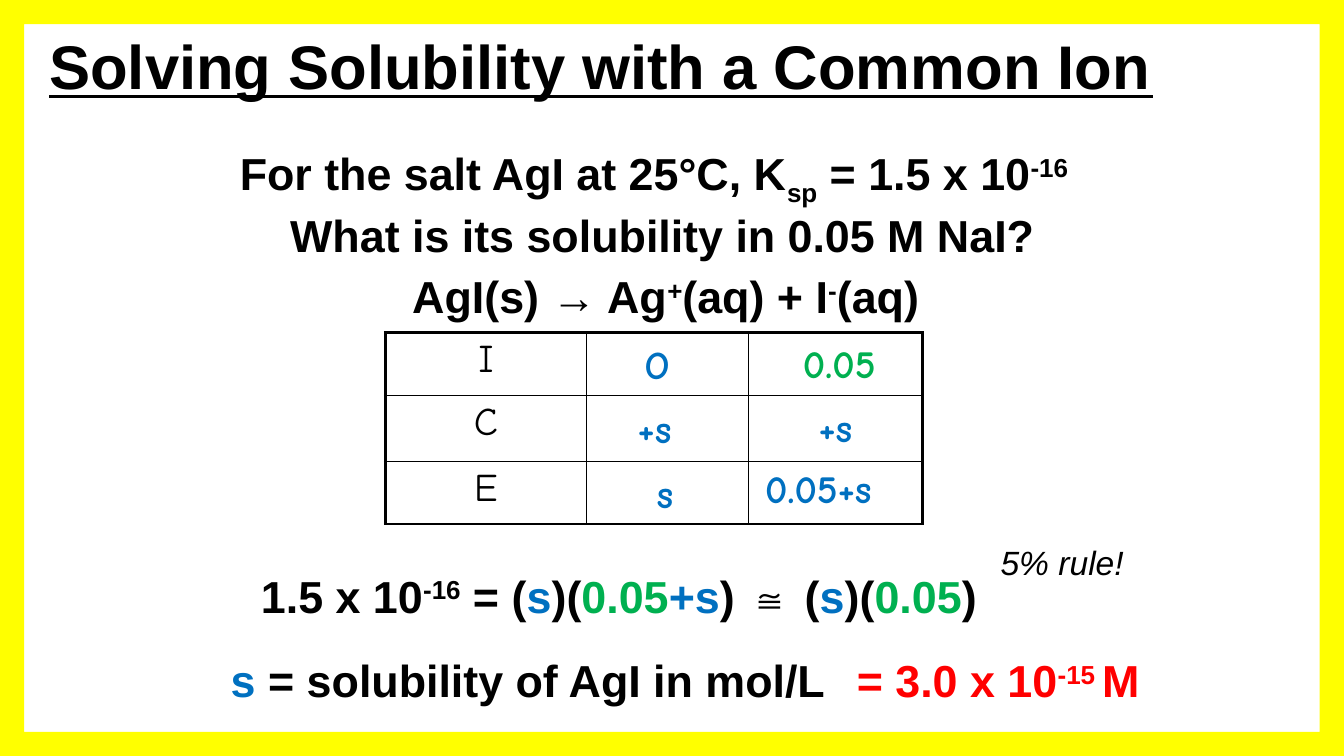
import itertools

import pptx
import pptx.dml.color
import pptx.enum.shapes
import pptx.enum.text
import pptx.oxml
import pptx.oxml.ns
import pptx.util

WIDTH, HEIGHT = 13.33, 7.5
BLACK, BLUE, GREEN, RED, YELLOW = "000000", "0070C0", "00B050", "FF0000", "FFFF00"
SUPER, SUB = 30, -25
CENTER = pptx.enum.text.PP_ALIGN.CENTER
LINE_HEIGHT = 0.64


def inches(*lengths):
    return [pptx.util.Inches(length) for length in lengths]


def rgb(code):
    return pptx.dml.color.RGBColor.from_string(code)


def style(font, size, face="Arial", bold=True):
    font.size = pptx.util.Pt(size)
    font.name = face
    font.bold = bold


def add_runs(paragraph, pieces):
    """Each piece is a text, a colour and, if raised or lowered, a baseline shift in percent."""
    for words, color, *shift in pieces:
        run = paragraph.add_run()
        run.text = words
        run.font.color.rgb = rgb(color)
        if shift:
            run._r.get_or_add_rPr().set("baseline", str(shift[0] * 1000))


def add_text(slide, box, lines, size=32, face="Arial", bold=True, wrap=False, align=None):
    frame = slide.shapes.add_textbox(*inches(*box)).text_frame
    frame.word_wrap = wrap
    frame.auto_size = pptx.enum.text.MSO_AUTO_SIZE.SHAPE_TO_FIT_TEXT
    for number, pieces in enumerate(lines):
        paragraph = frame.add_paragraph() if number else frame.paragraphs[0]
        paragraph.alignment = align
        style(paragraph.font, size, face, bold)
        add_runs(paragraph, pieces)
    return frame


def add_title(slide, box):
    frame = add_text(slide, box, [[("Solving Solubility with a Common Ion", BLACK)]],
                     size=44, wrap=True, align=CENTER)
    frame.auto_size = pptx.enum.text.MSO_AUTO_SIZE.NONE
    frame.vertical_anchor = pptx.enum.text.MSO_ANCHOR.MIDDLE
    frame.paragraphs[0].font.underline = True


def add_question(slide, box):
    left, top, width, height = box
    question = add_text(slide, (left, top, width, height - LINE_HEIGHT), [
        [("For the salt AgI at 25°C, K", BLACK), ("sp", BLACK, SUB),
         (" = 1.5 x 10", BLACK), ("-16", BLACK, SUPER)],
        [("What is its solubility in 0.05 M NaI?", BLACK)],
    ], wrap=True)
    question.paragraphs[1]._p.get_or_add_pPr().set("marL", str(pptx.util.Inches(0.5)))
    add_text(slide, (left + 1.71, top + height - LINE_HEIGHT, 5.29, LINE_HEIGHT), [[
        ("AgI(s) → Ag", BLACK), ("+", BLACK, SUPER), ("(aq) + I", BLACK),
        ("-", BLACK, SUPER), ("(aq)", BLACK)]])


def set_borders(cell, points):
    """Draw the left, right, top and bottom borders with the given line widths."""
    properties = cell._tc.get_or_add_tcPr()
    for position, (side, width) in enumerate(zip("LRTB", points)):
        properties.insert(position, pptx.oxml.parse_xml(
            f'<a:ln{side} {pptx.oxml.ns.nsdecls("a")} w="{pptx.util.Pt(width)}">'
            f'<a:solidFill><a:srgbClr val="{BLACK}"/></a:solidFill></a:ln{side}>'))


def add_ice_table(slide, left, top):
    columns, rows = [2, 1.6, 1.73], [0.62, 0.66, 0.62]
    table = slide.shapes.add_table(
        len(rows), len(columns), *inches(left, top, sum(columns), sum(rows))).table
    table.first_row = table.horz_banding = False
    for column, width in zip(table.columns, inches(*columns)):
        column.width = width
    for row, height in zip(table.rows, inches(*rows)):
        row.height = height
    outer, inner = 2.25, 1
    for r, c in itertools.product(range(len(rows)), range(len(columns))):
        cell = table.cell(r, c)
        cell.fill.background()
        edges = (c == 0, c == len(columns) - 1, r == 0, r == len(rows) - 1)
        set_borders(cell, [outer if edge else inner for edge in edges])
    for r, stage in enumerate("ICE"):
        paragraph = table.cell(r, 0).text_frame.paragraphs[0]
        paragraph.alignment = CENTER
        paragraph.space_before = pptx.util.Pt(5.6)
        style(paragraph.font, 28, "Comic Neue", False)
        add_runs(paragraph, [(stage, BLACK)])

    # row, column, text, colour, width, shift from the middle of the cell
    amounts = [
        (0, 1, "O", BLUE, 0.51, -0.07, 0),
        (0, 2, "0.05", GREEN, 1.08, 0.12, -0.01),
        (1, 1, "+s", BLUE, 0.63, -0.08, 0),
        (1, 2, "+s", BLUE, 0.63, 0.05, -0.01),
        (2, 1, "s", BLUE, 0.39, -0.01, 0),
        (2, 2, "0.05+s", BLUE, 1.55, -0.02, -0.05),
    ]
    height = 0.57
    for r, c, amount, color, width, across, down in amounts:
        middle_x = left + sum(columns[:c]) + columns[c] / 2 + across
        middle_y = top + sum(rows[:r]) + rows[r] / 2 + down
        add_text(slide, (middle_x - width / 2, middle_y - height / 2, width, height),
                 [[(amount, color)]], size=28, face="Comic Neue")


def add_solution(slide, box):
    left, top, width, height = box
    add_text(slide, (left + 0.3, top + 0.26, 8.82, LINE_HEIGHT), [[
        ("1.5 x 10", BLACK), ("-16", BLACK, SUPER), (" = (", BLACK), ("s", BLUE),
        (")(", BLACK), ("0.05", GREEN), ("+s", BLUE), (") ≅ (", BLACK), ("s", BLUE),
        (")(", BLACK), ("0.05", GREEN), (")", BLACK)]], wrap=True)
    rule = add_text(slide, (left + width - 2.77, top, 2.77, 0.5), [[("5% rule!", BLACK)]],
                    size=24, bold=False, wrap=True, align=CENTER)
    rule.paragraphs[0].font.italic = True
    answer_top = top + height - LINE_HEIGHT
    add_text(slide, (left, answer_top, 6.15, LINE_HEIGHT),
             [[("s", BLUE), (" = solubility of AgI in mol/L", BLACK)]])
    add_text(slide, (left + 6.21, answer_top, 3.1, LINE_HEIGHT),
             [[("= 3.0 x 10", RED), ("-15 ", RED, SUPER), ("M", RED)]])


def add_border(slide):
    border = slide.shapes.add_shape(
        pptx.enum.shapes.MSO_SHAPE.FRAME, *inches(0, 0, WIDTH, HEIGHT))
    border.adjustments[0] = 0.032
    border.shadow.inherit = False
    border.fill.solid()
    border.fill.fore_color.rgb = rgb(YELLOW)
    border.line.fill.background()


def main():
    deck = pptx.Presentation()
    deck.slide_width, deck.slide_height = inches(WIDTH, HEIGHT)
    slide = deck.slides.add_slide(deck.slide_layouts[6])
    add_border(slide)
    add_title(slide, (0.25, 0.13, 11.42, 1.03))
    add_question(slide, (2.28, 1.4, 9.01, 1.86))
    add_ice_table(slide, 3.82, 3.3)
    add_solution(slide, (2.19, 5.33, 9.73, 1.74))
    deck.save("out.pptx")


if __name__ == "__main__":
    main()
